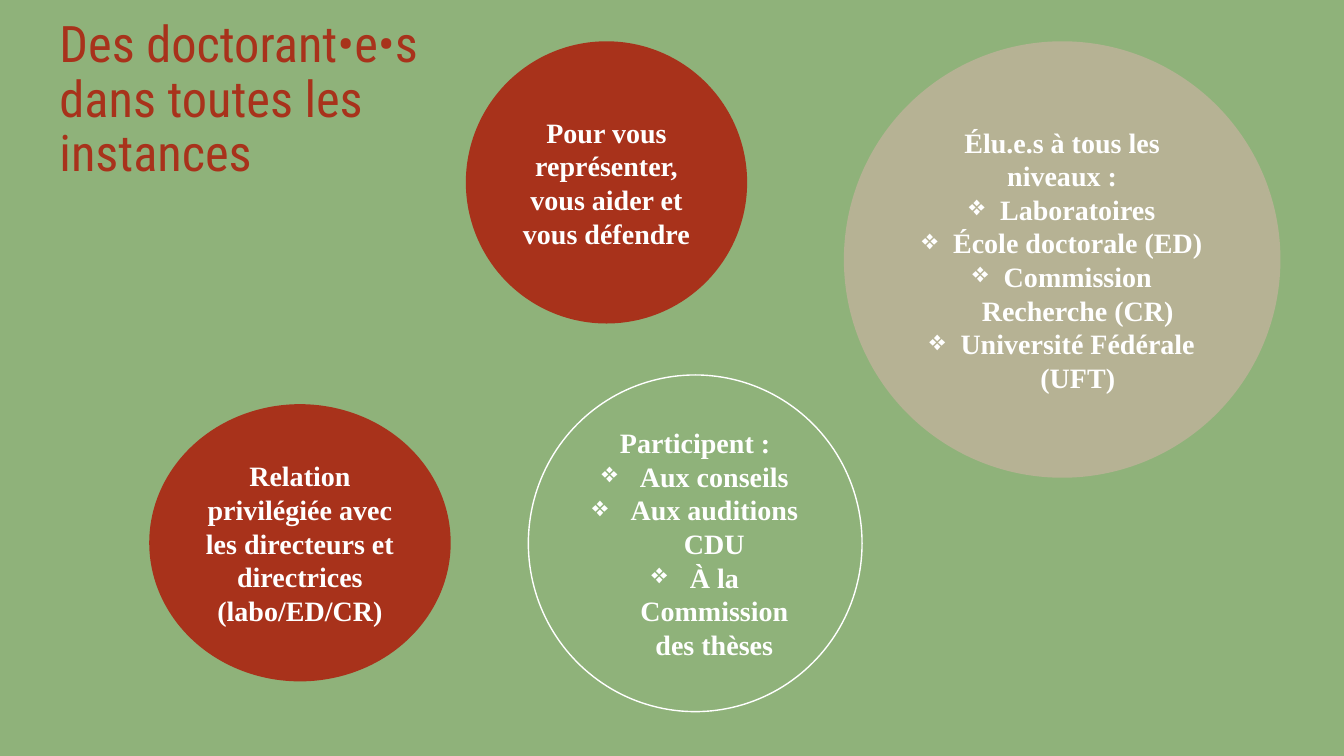
from dataclasses import dataclass

from lxml.etree import SubElement
from pptx import Presentation
from pptx.dml.color import RGBColor
from pptx.enum.shapes import MSO_SHAPE as Shape
from pptx.enum.text import MSO_ANCHOR as Anchor, PP_ALIGN as Align
from pptx.oxml.ns import qn
from pptx.slide import Slide
from pptx.util import Emu, Pt

SCALE = 9144
GREEN, RED, SAND, WHITE = "8FB27A", "A8321B", "B6B294", "FFFFFF"


@dataclass
class Bubble:
    """A circle with a lead text and bulleted items."""
    left: int
    top: int
    width: int
    height: int
    fill: str
    lead: str
    items: tuple[str, ...] = ()
    indent: int = 0


BUBBLES = [
    Bubble(524, 372, 331, 334, "", "Participent :",
           ("Aux conseils", "Aux auditions CDU", "À la Commission des thèses"), 38),
    Bubble(148, 401, 299, 275, RED,
           "Relation privilégiée avec les directeurs et directrices (labo/ED/CR)"),
    Bubble(462, 41, 279, 280, RED,
           "Pour vous représenter, vous aider et vous défendre"),
    Bubble(837, 41, 433, 433, SAND, "Élu.e.s à tous les niveaux :",
           ("Laboratoires", "École doctorale (ED)", "Commission Recherche (CR)",
            "Université Fédérale (UFT)"), 31),
]


def px(count: int) -> Emu:
    """Turn px into EMU."""
    return Emu(count * SCALE)


def color(code: str) -> RGBColor:
    """Turn a hex string into a colour."""
    return RGBColor.from_string(code)


def style(para, size: int, face: str, code: str, bold: bool = False) -> None:
    """Set the font of each run in a paragraph."""
    for run in para.runs:
        font = run.font
        font.size, font.name, font.bold = Pt(size), face, bold
        font.color.rgb = color(code)


def bullet(para, indent: int) -> None:
    """Give a paragraph a hanging bullet."""
    props = para._p.get_or_add_pPr()
    props.set("marL", str(px(indent)))
    props.set("indent", str(-px(indent)))
    SubElement(props, qn("a:buChar")).set("char", "❖")


def draw_title(slide: Slide) -> None:
    """Draw the slide title."""
    box = slide.shapes.add_textbox(px(46), px(84), px(435), px(110))
    frame = box.text_frame
    frame.word_wrap = True
    frame.vertical_anchor = Anchor.BOTTOM
    frame.margin_left = frame.margin_right = px(13)
    frame.margin_top = frame.margin_bottom = px(13)
    frame.text = "Des doctorant•e•s dans toutes les instances"
    para = frame.paragraphs[0]
    para.line_spacing = 0.9
    style(para, 36, "Roboto Condensed", RED)


def draw_bubble(slide: Slide, item: Bubble) -> None:
    """Draw one bubble with its text."""
    oval = slide.shapes.add_shape(Shape.OVAL, px(item.left), px(item.top),
                                  px(item.width), px(item.height))
    oval.shadow.inherit = False
    if item.fill:
        oval.fill.solid()
        oval.fill.fore_color.rgb = color(item.fill)
        oval.line.fill.background()
    else:
        oval.fill.background()
        oval.line.color.rgb = color(WHITE)
        oval.line.width = Pt(1)
    frame = oval.text_frame
    frame.word_wrap = True
    frame.vertical_anchor = Anchor.MIDDLE
    frame.text = "\n".join((item.lead, *item.items))
    for para in frame.paragraphs:
        para.alignment = Align.CENTER
        style(para, 20, "Times New Roman", WHITE, True)
    for para in frame.paragraphs[1:]:
        bullet(para, item.indent)


def main() -> None:
    """Build and save the slide."""
    deck = Presentation()
    deck.slide_width, deck.slide_height = px(1333), px(750)
    slide = deck.slides.add_slide(deck.slide_layouts[6])
    back = slide.background.fill
    back.solid()
    back.fore_color.rgb = color(GREEN)
    draw_title(slide)
    for item in BUBBLES:
        draw_bubble(slide, item)
    deck.save("out.pptx")


if __name__ == "__main__":
    main()
